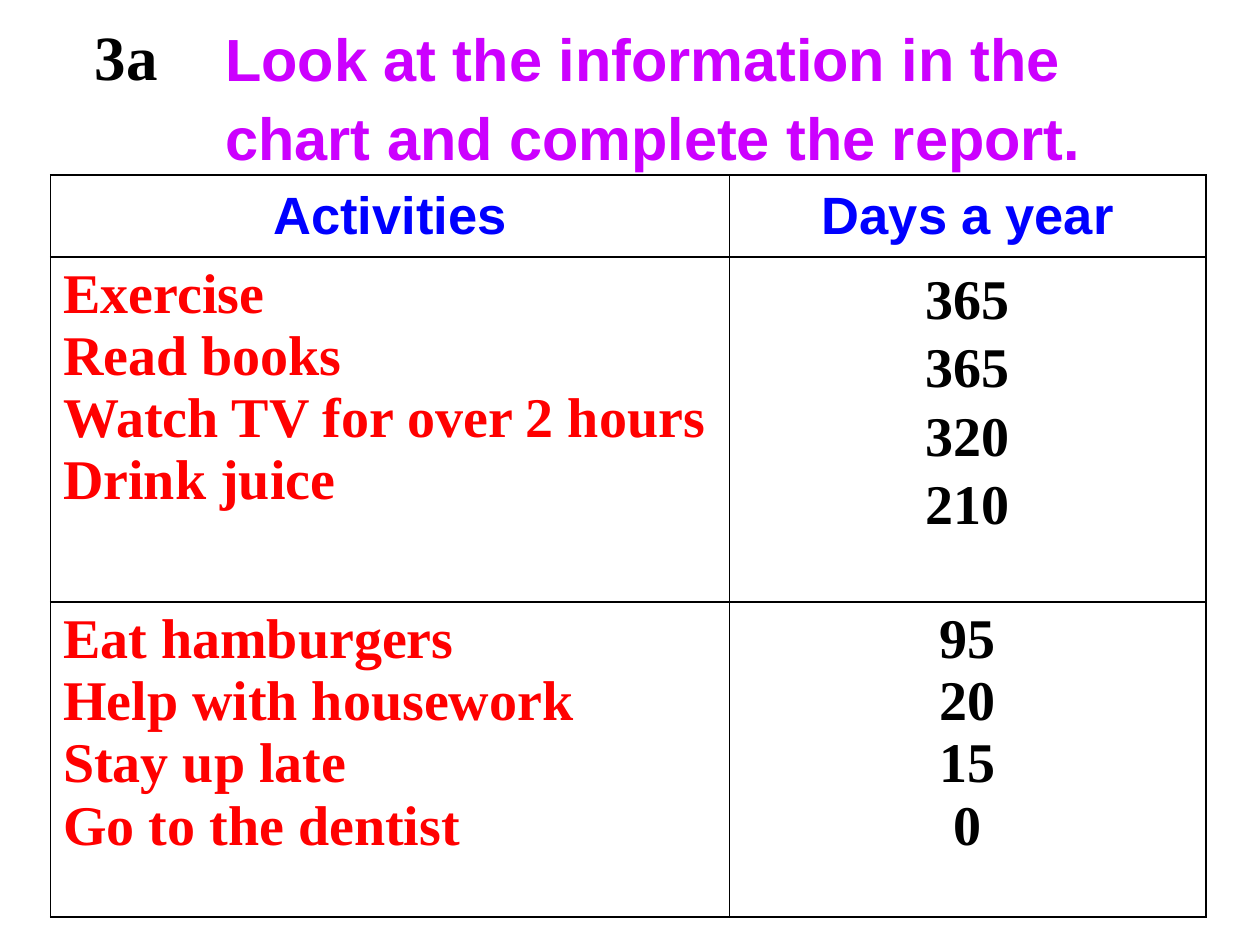
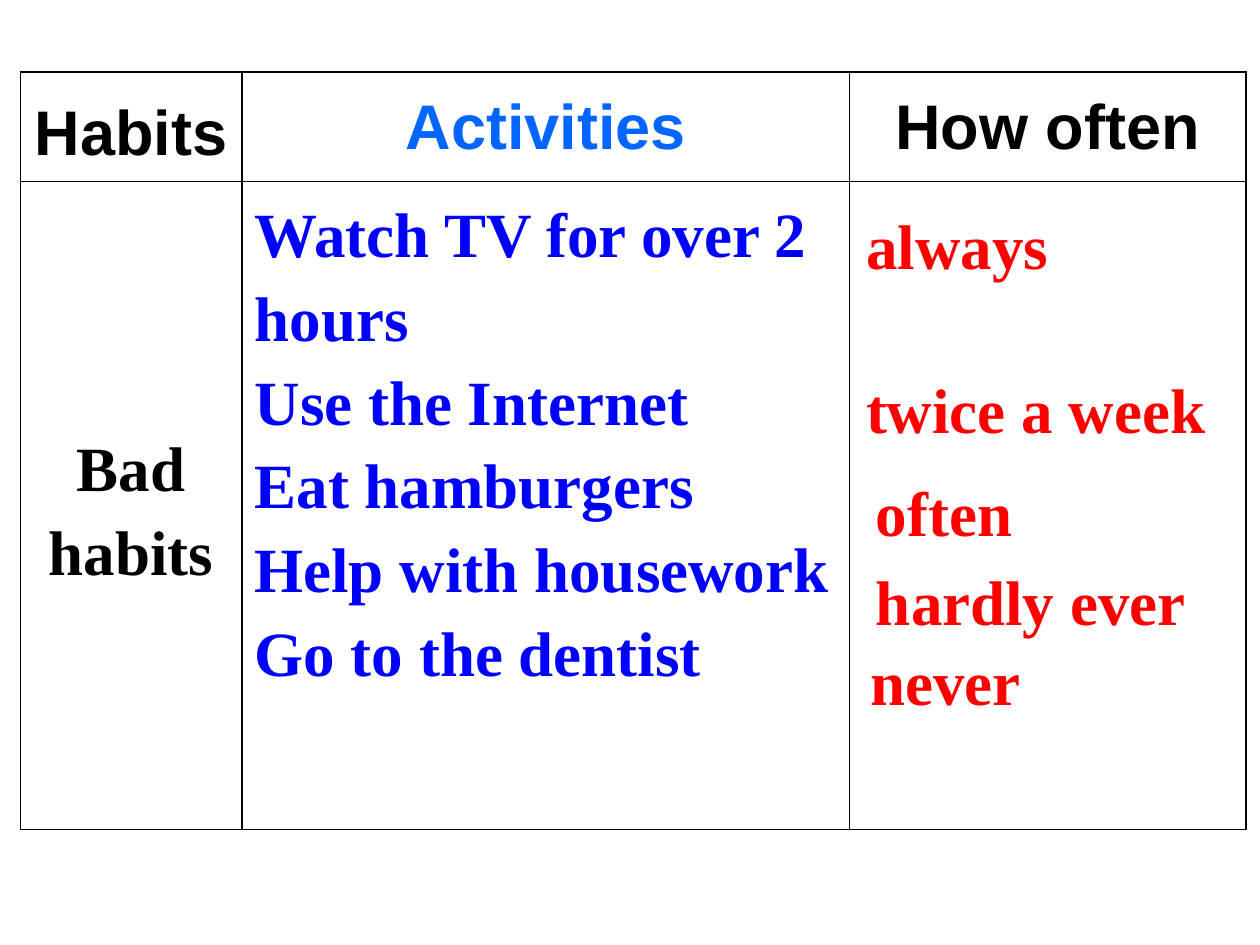
from dataclasses import dataclass

from lxml.etree import SubElement
from pptx import Presentation
from pptx.dml.color import RGBColor
from pptx.enum.shapes import MSO_SHAPE as Shape
from pptx.enum.text import MSO_ANCHOR as Anchor, MSO_AUTO_SIZE as AutoSize, PP_ALIGN as Align
from pptx.oxml.ns import qn
from pptx.util import Cm, Pt


@dataclass(frozen=True)
class Theme:
    black: str = "000000"
    white: str = "FFFFFF"
    red: str = "FF0000"
    blue: str = "0000FF"
    sky: str = "0066FF"
    violet: str = "CC00FF"
    sans: str = "Arial"
    serif: str = "Times New Roman"
    header_size: int = 30
    list_size: int = 32
    title_size: int = 34
    large_size: int = 36
    border: float = 1


theme = Theme()


def write(frame, lines, font=theme.serif, size=theme.large_size, color=theme.black,
          align=Align.LEFT, spacing=1.0, anchor=Anchor.TOP):
    """Fill a text frame or table cell with one bold paragraph per line."""
    frame.vertical_anchor = anchor
    text_frame = getattr(frame, "text_frame", frame)
    text_frame.text = "\n".join(lines)
    for paragraph in text_frame.paragraphs:
        paragraph.alignment = align
        paragraph.line_spacing = spacing
        paragraph.space_before = Pt(0)
        for run in paragraph.runs:
            run.font.name = font
            run.font.size = Pt(size)
            run.font.bold = True
            run.font.color.rgb = RGBColor.from_string(color)


def add_grid(slide, left, top, widths, heights, rows):
    """Add a white, black-ruled table; each cell is (lines, text format)."""
    table = slide.shapes.add_table(len(heights), len(widths), Cm(left), Cm(top),
                                   Cm(sum(widths)), Cm(sum(heights))).table
    table.horz_banding = False
    for column, width in zip(table.columns, widths):
        column.width = Cm(width)
    for row, height, contents in zip(table.rows, heights, rows):
        row.height = Cm(height)
        for cell, (lines, text_format) in zip(row.cells, contents):
            properties = cell._tc.get_or_add_tcPr()
            for side in ("a:lnL", "a:lnR", "a:lnT", "a:lnB"):
                edge = SubElement(properties, qn(side), w=str(Pt(theme.border)))
                SubElement(SubElement(edge, qn("a:solidFill")), qn("a:srgbClr"),
                           val=theme.black)
            cell.fill.solid()
            cell.fill.fore_color.rgb = RGBColor.from_string(theme.white)
            write(cell, lines, **text_format)


deck = Presentation()
deck.slide_width, deck.slide_height = Cm(25.4), Cm(19.05)
title_only, blank = deck.slide_layouts[5], deck.slide_layouts[6]

# Days a year spent on each activity
report = deck.slides.add_slide(title_only)
header = dict(font=theme.sans, size=theme.header_size, color=theme.blue,
              align=Align.CENTER, spacing=1.1)
activities = dict(size=theme.list_size, color=theme.red)
days = dict(size=theme.list_size, align=Align.CENTER)
add_grid(report, 1.02, 3.53, [13.69, 9.6], [1.65, 6.96, 6.35], [
    [(["Activities"], header), (["Days a year"], header)],
    [(["Exercise", "Read books", "Watch TV for over 2 hours", "Drink juice"], activities),
     (["365", "365", "320", "210"], dict(days, spacing=1.1))],
    [(["Eat hamburgers", "Help with housework", "Stay up late", "Go to the dentist"],
      activities),
     (["95", "20", "15", "0"], days)],
])

task = report.shapes.title
task.left, task.top, task.width, task.height = Cm(4.29), Cm(0.53), Cm(20.19), Cm(2.72)
task.text_frame.auto_size = AutoSize.NONE
write(task.text_frame, ["Look at the information in the chart and complete the report."],
      font=theme.sans, size=theme.title_size, color=theme.violet, spacing=1.1,
      anchor=Anchor.MIDDLE)

task_number = report.shapes.add_shape(Shape.OVAL, Cm(1.3), Cm(0.13), Cm(2.49), Cm(1.83))
task_number.shadow.inherit = False
task_number.fill.background()
task_number.line.fill.background()
task_number.text_frame.word_wrap = False
write(task_number.text_frame, ["3a"], align=Align.CENTER, spacing=1.1, anchor=Anchor.MIDDLE)

# Bad habits and how often they happen
habits = deck.slides.add_slide(blank)
heading = dict(font=theme.sans, align=Align.CENTER, spacing=1.2)
add_grid(habits, 0.41, 1.45, [4.47, 12.24, 8.0], [2.21, 13.06], [
    [(["Habits"], dict(heading, anchor=Anchor.MIDDLE)),
     (["Activities"], dict(heading, color=theme.sky)),
     (["How often"], heading)],
    [(["Bad habits"], dict(align=Align.CENTER, spacing=1.2, anchor=Anchor.MIDDLE)),
     (["Watch TV for over 2 hours", "Use the Internet", "Eat hamburgers",
       "Help with housework", "Go to the dentist"], dict(color=theme.blue, spacing=1.2)),
     ([], {})],
])

for frequency, left, top, width, inset in [
    ("always", 16.89, 3.73, 7.39, 0.57),
    ("twice a week", 16.89, 7.04, 7.85, 0.57),
    ("often", 17.09, 9.12, 4.39, 0.57),
    ("hardly ever", 17.09, 10.92, 7.39, 0.57),
    ("never", 17.3, 12.52, 5.21, 0.25),
]:
    answer = habits.shapes.add_textbox(Cm(left), Cm(top), Cm(width), Cm(2.08)).text_frame
    answer.word_wrap = True
    answer.auto_size = AutoSize.SHAPE_TO_FIT_TEXT
    answer.margin_left = Cm(inset)
    write(answer, [frequency], color=theme.red, spacing=1.2)

deck.save("out.pptx")
